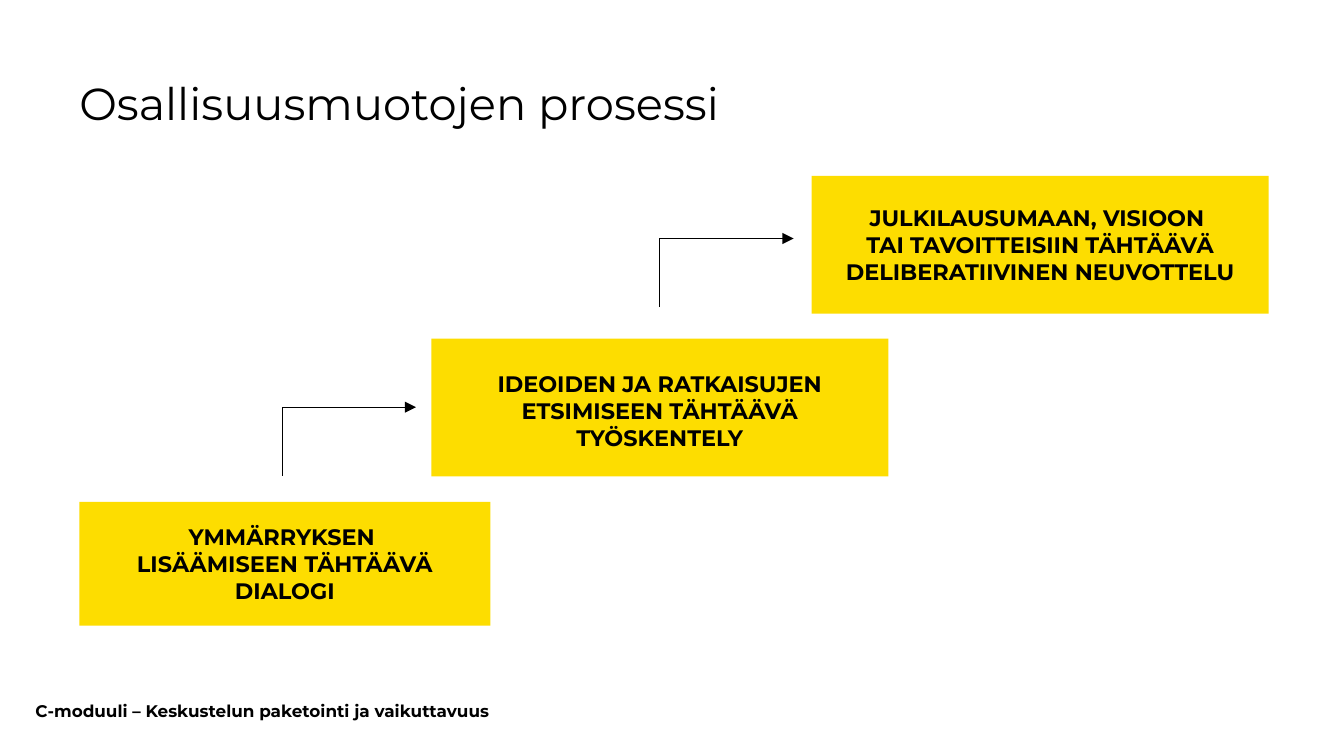
from dataclasses import dataclass

from lxml import etree
from pptx import Presentation
from pptx.dml.color import RGBColor
from pptx.enum.shapes import MSO_CONNECTOR, MSO_SHAPE
from pptx.enum.text import MSO_ANCHOR, PP_ALIGN
from pptx.oxml.ns import qn
from pptx.util import Pt

RECT = MSO_SHAPE.RECTANGLE
ELBOW = MSO_CONNECTOR.ELBOW
TOP, MIDDLE = MSO_ANCHOR.TOP, MSO_ANCHOR.MIDDLE
LEFT, CENTER = PP_ALIGN.LEFT, PP_ALIGN.CENTER
PX = 4572


@dataclass(frozen=True)
class Theme:
    font: str = "Montserrat"
    ink: RGBColor = RGBColor(0, 0, 0)
    box: RGBColor = RGBColor(0xFD, 0xDD, 0x00)
    title: int = 24
    label: int = 12
    footer: int = 9
    line: float = 0.5


THEME = Theme()
LABEL_H = 142
ARROW_W, ARROW_H = 199, 102

STEPS = [
    ((118, 747, 612, 184), 22, "YMMÄRRYKSEN \vLISÄÄMISEEN TÄHTÄÄVÄ DIALOGI"),
    ((642, 504, 680, 205), 37, "IDEOIDEN JA RATKAISUJEN ETSIMISEEN TÄHTÄÄVÄ TYÖSKENTELY"),
    ((1208, 262, 680, 205), 32,
     "JULKILAUSUMAAN, VISIOON \vTAI TAVOITTEISIIN TÄHTÄÄVÄ DELIBERATIIVINEN NEUVOTTELU"),
]
ARROWS = [(420, 606), (982, 355)]


def emu(*lengths):
    return [n * PX for n in lengths]


def add_text(s, box, text, size, bold=True, align=LEFT, anchor=TOP, inset=None):
    tf = s.shapes.add_textbox(*emu(*box)).text_frame
    tf.word_wrap = True
    tf.vertical_anchor = anchor
    if inset is not None:
        tf.margin_left = tf.margin_right = tf.margin_top = tf.margin_bottom = inset
    tf.text = text
    p = tf.paragraphs[0]
    p.alignment = align
    p.font.name = THEME.font
    p.font.size = Pt(size)
    p.font.bold = bold
    p.font.color.rgb = THEME.ink


def add_title(s, box):
    add_text(s, box, "Osallisuusmuotojen prosessi", THEME.title,
             bold=False, anchor=MIDDLE, inset=0)


def add_step(s, box, drop, text):
    x, y, w, h = box
    sp = s.shapes.add_shape(RECT, *emu(x, y, w, h))
    sp.shadow.inherit = False
    sp.fill.solid()
    sp.fill.fore_color.rgb = THEME.box
    sp.line.fill.background()
    add_text(s, (x, y + drop, w, LABEL_H), text, THEME.label, align=CENTER)


def add_arrow(s, box):
    x, y, w, h = box
    cxn = s.shapes.add_connector(ELBOW, *emu(x, y + h, x + w, y))
    cxn.line.color.rgb = THEME.ink
    cxn.line.width = Pt(THEME.line)
    sp_pr = cxn._element.spPr
    guides = sp_pr.find(qn("a:prstGeom")).find(qn("a:avLst"))
    etree.SubElement(guides, qn("a:gd"), name="adj1", fmla="val 0")
    etree.SubElement(sp_pr.find(qn("a:ln")), qn("a:tailEnd"), type="triangle")
    etree.SubElement(sp_pr, qn("a:effectLst"))


def add_footer(s, box):
    add_text(s, box, "C-moduuli – Keskustelun paketointi ja vaikuttavuus", THEME.footer)


def main():
    prs = Presentation()
    prs.slide_width, prs.slide_height = emu(2000, 1125)
    s = prs.slides.add_slide(prs.slide_layouts[6])
    add_title(s, (118, 58, 1780, 188))
    for box, drop, text in STEPS:
        add_step(s, box, drop, text)
    for x, y in ARROWS:
        add_arrow(s, (x, y, ARROW_W, ARROW_H))
    add_footer(s, (33, 1033, 1000, 50))
    prs.save("out.pptx")


if __name__ == "__main__":
    main()
